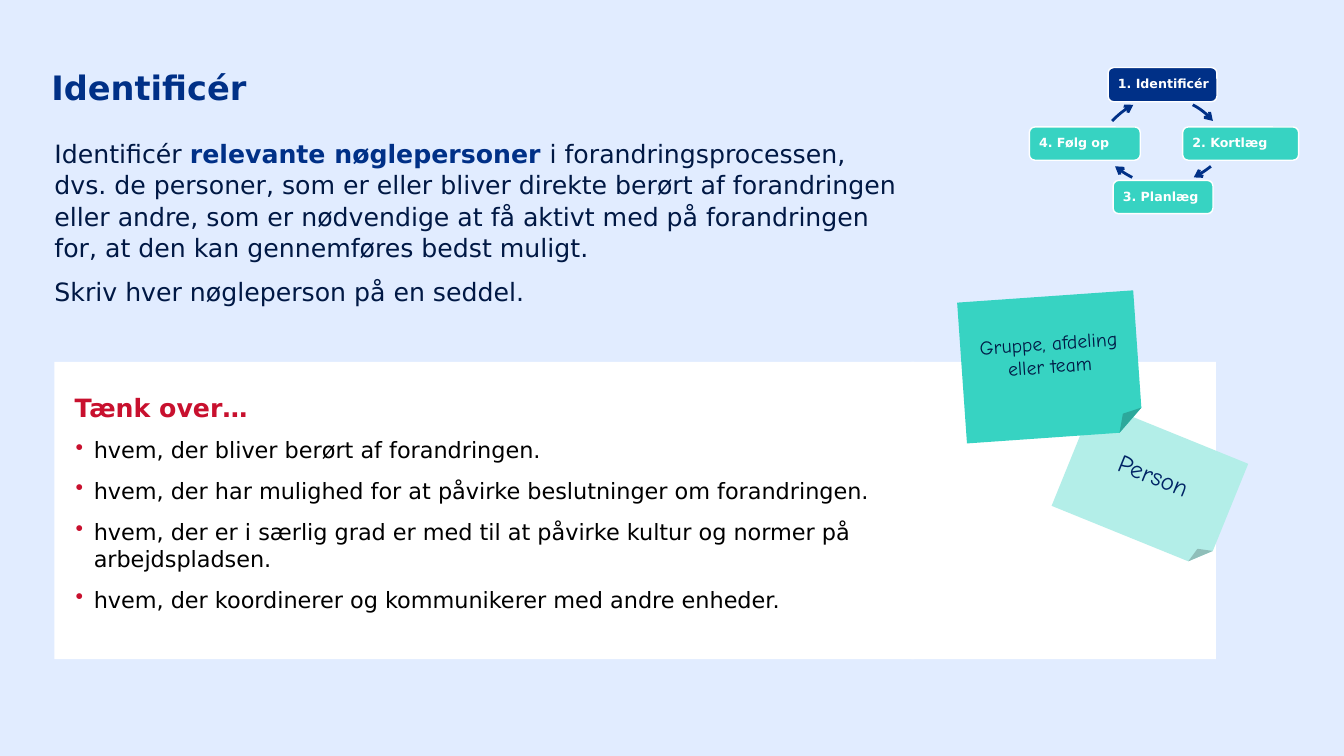
import pptx
import pptx.dml.color
import pptx.enum.shapes
import pptx.enum.text
import pptx.oxml
import pptx.oxml.ns
import pptx.util

Inches = pptx.util.Inches
Pt = pptx.util.Pt
SHAPE = pptx.enum.shapes.MSO_SHAPE
ALIGN = pptx.enum.text.PP_ALIGN
ANCHOR = pptx.enum.text.MSO_ANCHOR
COLORS = {
    "background": "E1ECFF", "white": "FFFFFF", "black": "000000",
    "blue": "003087", "navy": "001844", "ink": "002465", "red": "C8102E",
    "teal": "37D3C2", "mint": "B3EEE8",
}
NAMESPACE = pptx.oxml.ns.nsdecls("a")


def rgb(name):
    return pptx.dml.color.RGBColor.from_string(COLORS[name])


def add_box(kind, bounds, fill, line=None, line_width=1):
    """Add a flat shape with optional outline; bounds are in inches."""
    shape = slide.shapes.add_shape(kind, *map(Inches, bounds))
    shape.shadow.inherit = False
    shape.fill.solid()
    shape.fill.fore_color.rgb = rgb(fill)
    if line:
        shape.line.color.rgb = rgb(line)
        shape.line.width = Pt(line_width)
    else:
        shape.line.fill.background()
    return shape


presentation = pptx.Presentation()
presentation.slide_width = Inches(13.33)
presentation.slide_height = Inches(7.5)
slide = presentation.slides.add_slide(presentation.slide_layouts[1])
slide.background.fill.solid()
slide.background.fill.fore_color.rgb = rgb("background")

# Title and introduction
title, body = slide.placeholders
for placeholder, bounds in ((title, (0.51, 0.65, 9.14, 0.56)), (body, (0.54, 1.36, 8.37, 1.75))):
    placeholder.left, placeholder.top, placeholder.width, placeholder.height = map(Inches, bounds)
    frame = placeholder.text_frame
    frame.margin_left = frame.margin_top = frame.margin_right = frame.margin_bottom = 0
    frame.vertical_anchor = ANCHOR.TOP
    frame.auto_size = pptx.enum.text.MSO_AUTO_SIZE.NONE
    frame.word_wrap = True

title.text_frame.text = "Identificér"
paragraph = title.text_frame.paragraphs[0]
paragraph.alignment = ALIGN.LEFT
paragraph.line_spacing = 1.04
paragraph.font.name = "DejaVu Sans"
paragraph.font.size = Pt(24)
paragraph.font.bold = True
paragraph.font.color.rgb = rgb("blue")

introduction = [
    [("Identificér ", False), ("relevante nøglepersoner ", True),
     ("i forandringsprocessen, dvs. de personer, som er eller bliver direkte berørt af "
      "forandringen eller andre, som er nødvendige at få aktivt med på forandringen for, "
      "at den kan gennemføres bedst muligt.", False)],
    [("Skriv hver nøgleperson på en seddel.", False)],
]
for index, parts in enumerate(introduction):
    paragraph = body.text_frame.add_paragraph() if index else body.text_frame.paragraphs[0]
    properties = paragraph._p.get_or_add_pPr()
    properties.set("marL", "0")
    properties.set("indent", "0")
    properties.append(pptx.oxml.parse_xml(f"<a:buNone {NAMESPACE}/>"))
    paragraph.line_spacing = 1.04
    paragraph.space_before = Pt(6 if index else 0)
    paragraph.space_after = Pt(3)
    paragraph.font.name = "DejaVu Sans"
    paragraph.font.size = Pt(18)
    paragraph.font.color.rgb = rgb("navy")
    for text, highlighted in parts:
        run = paragraph.add_run()
        run.text = text
        if highlighted:
            run.font.bold = True
            run.font.color.rgb = rgb("blue")

# White panel with questions to consider
add_box(SHAPE.RECTANGLE, (9.04, 3.59, 3.02, 2.95), "white")
panel = add_box(SHAPE.RECTANGLE, (0.54, 3.59, 8.53, 2.95), "white")
frame = panel.text_frame
frame.word_wrap = True
frame.vertical_anchor = ANCHOR.TOP
frame.margin_left = frame.margin_right = frame.margin_bottom = 0
frame.margin_top = Inches(0.3)
questions = [
    "Tænk over…",
    "hvem, der bliver berørt af forandringen.",
    "hvem, der har mulighed for at påvirke beslutninger om forandringen.",
    "hvem, der er i særlig grad er med til at påvirke kultur og normer på arbejdspladsen.",
    "hvem, der koordinerer og kommunikerer med andre enheder.",
]
for index, text in enumerate(questions):
    paragraph = frame.add_paragraph() if index else frame.paragraphs[0]
    properties = paragraph._p.get_or_add_pPr()
    properties.set("marL", str(Inches(0.39 if index else 0.2)))
    properties.set("indent", str(Inches(-0.18 if index else 0)))
    if index:
        properties.append(pptx.oxml.parse_xml(
            f'<a:buClr {NAMESPACE}><a:srgbClr val="{COLORS["red"]}"/></a:buClr>'))
        properties.append(pptx.oxml.parse_xml(f'<a:buChar {NAMESPACE} char="•"/>'))
    paragraph.text = text
    paragraph.alignment = ALIGN.LEFT
    paragraph.space_after = Pt(10)
    paragraph.font.name = "DejaVu Sans"
    paragraph.font.size = Pt(16 if index else 18)
    paragraph.font.bold = index == 0
    paragraph.font.color.rgb = rgb("black" if index else "red")

# Sticky notes
notes = [
    ("Person", (10.58, 4.25, 1.65, 1.12), 22.1, "mint", 18, "ink"),
    ("Gruppe, afdeling eller team", (9.54, 2.94, 1.75, 1.4), 356, "teal", 14, "navy"),
]
for text, bounds, rotation, fill, size, color in notes:
    note = add_box(SHAPE.FOLDED_CORNER, bounds, fill)
    note.rotation = rotation
    note.text_frame.word_wrap = True
    note.text_frame.vertical_anchor = ANCHOR.MIDDLE
    paragraph = note.text_frame.paragraphs[0]
    paragraph.text = text
    paragraph.alignment = ALIGN.CENTER
    paragraph.line_spacing = 0.97
    paragraph.font.name = "Comic Neue"
    paragraph.font.size = Pt(size)
    paragraph.font.color.rgb = rgb(color)

# Four-step cycle
steps = [
    ("1. Identificér", (10.99, 0.67, 1.08, 0.34), "blue"),
    ("2. Kortlæg", (11.73, 1.26, 1.15, 0.33), "teal"),
    ("3. Planlæg", (11.04, 1.79, 0.99, 0.33), "teal"),
    ("4. Følg op", (10.21, 1.26, 1.1, 0.33), "teal"),
]
for text, bounds, fill in steps:
    step = add_box(SHAPE.ROUNDED_RECTANGLE, bounds, fill, "white")
    frame = step.text_frame
    frame.word_wrap = False
    frame.vertical_anchor = ANCHOR.MIDDLE
    frame.margin_left = Inches(0.08)
    frame.margin_top = frame.margin_right = frame.margin_bottom = 0
    paragraph = frame.paragraphs[0]
    paragraph.text = text
    paragraph.alignment = ALIGN.LEFT
    paragraph.line_spacing = 0.9
    paragraph.font.name = "DejaVu Sans"
    paragraph.font.size = Pt(9)
    paragraph.font.bold = True
    paragraph.font.color.rgb = rgb("white")

# Curved arrows, each given by four Bézier points
arrows = [
    ((11.83, 1.04), (11.91, 1.08), (11.98, 1.14), (12.03, 1.2)),
    ((12.01, 1.65), (11.96, 1.69), (11.9, 1.73), (11.84, 1.76)),
    ((11.23, 1.76), (11.17, 1.73), (11.11, 1.69), (11.06, 1.65)),
    ((11.03, 1.2), (11.09, 1.14), (11.16, 1.08), (11.24, 1.04)),
]
segments = 6
for controls in arrows:
    curve = []
    for position in range(segments + 1):
        t = position / segments
        weights = ((1 - t) ** 3, 3 * t * (1 - t) ** 2, 3 * t ** 2 * (1 - t), t ** 3)
        curve.append([Inches(sum(weight * point[axis] for weight, point in zip(weights, controls)))
                      for axis in (0, 1)])
    builder = slide.shapes.build_freeform(*curve[0])
    builder.add_line_segments(curve[1:], close=False)
    arrow = builder.convert_to_shape()
    arrow.shadow.inherit = False
    arrow.fill.background()
    arrow.line.color.rgb = rgb("blue")
    arrow.line.width = Pt(2)
    arrow.line._get_or_add_ln().append(
        pptx.oxml.parse_xml(f'<a:tailEnd {NAMESPACE} type="arrow"/>'))

presentation.save("out.pptx")
